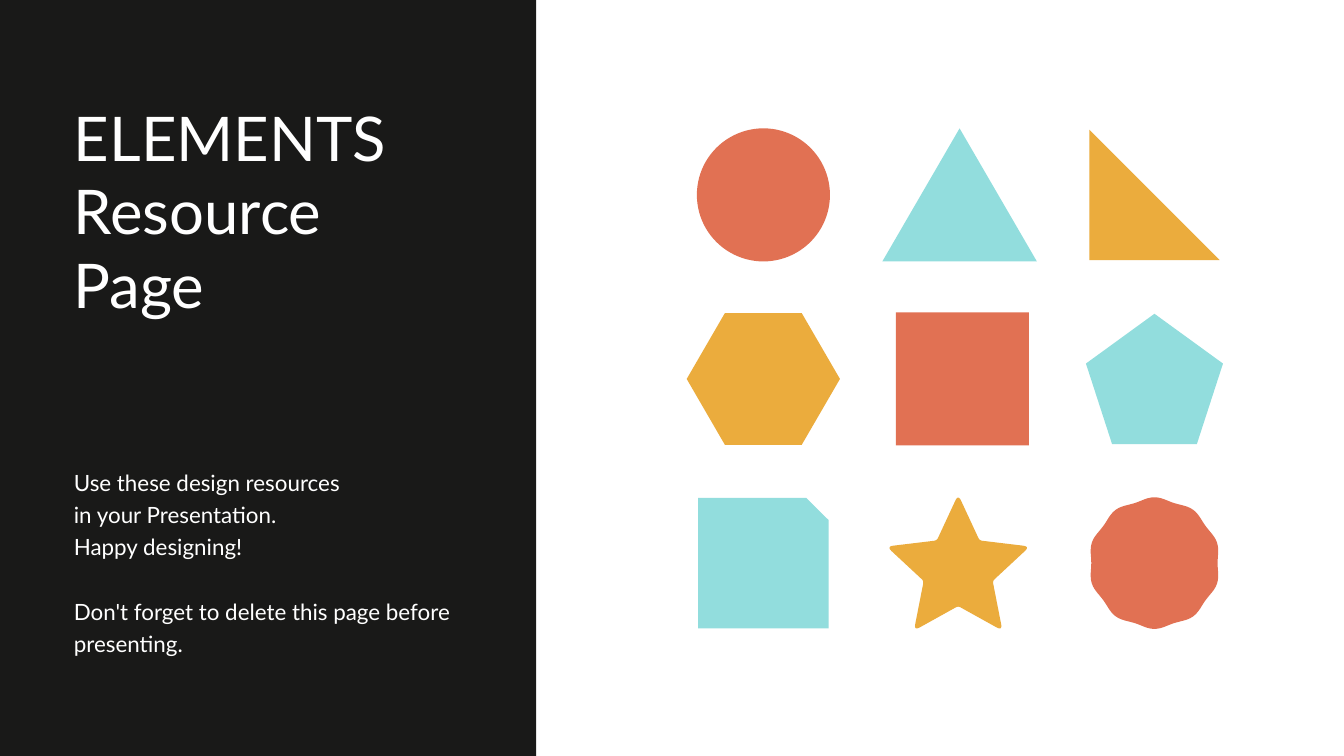
import math
import pptx
import pptx.util
import pptx.dml.color
import pptx.enum.shapes

Inches = pptx.util.Inches
RGBColor = pptx.dml.color.RGBColor
MSO = pptx.enum.shapes.MSO_SHAPE

BLACK = RGBColor(0x19, 0x19, 0x18)
WHITE = RGBColor(0xFF, 0xFF, 0xFF)
CORAL = RGBColor(0xE1, 0x71, 0x53)
AQUA = RGBColor(0x92, 0xDD, 0xDD)
AMBER = RGBColor(0xEB, 0xAC, 0x3D)

# Content
TITLE = ["ELEMENTS", "Resource", "Page"]
BODY = ["Use these design resources", "in your Presentation.", "Happy designing!",
        "Don't forget to delete this page before presenting."]

# Preset elements: shape, colour, centre x, row, width, height, adjustments
LEFT, MIDDLE, RIGHT = 5.68, 7.14, 8.59
ROWS = [1.45, 2.82, 4.19]
ELEMENTS = [
    (MSO.OVAL, CORAL, LEFT, 0, 0.99, 0.99, []),
    (MSO.ISOSCELES_TRIANGLE, AQUA, MIDDLE, 0, 1.15, 0.99, []),
    (MSO.RIGHT_TRIANGLE, AMBER, RIGHT, 0, 0.97, 0.97, []),
    (MSO.RECTANGLE, CORAL, 7.16, 1, 0.99, 0.99, []),
    (MSO.HEXAGON, AMBER, LEFT, 1, 1.14, 0.98, [0.29]),
    (MSO.REGULAR_PENTAGON, AQUA, RIGHT, 1, 1.02, 0.97, []),
    (MSO.SNIP_1_RECTANGLE, AQUA, LEFT, 2, 0.97, 0.97, [0.17]),
]

SLIDE_W = 10
SLIDE_H = SLIDE_W * 9 / 16

prs = pptx.Presentation()
prs.slide_width, prs.slide_height = Inches(SLIDE_W), Inches(SLIDE_H)
s = prs.slides.add_slide(prs.slide_layouts[6])


def paint(sp, color):
    sp.fill.solid()
    sp.fill.fore_color.rgb = color
    sp.line.fill.background()
    sp.shadow.inherit = False


def add_preset(kind, color, x, y, w, h, adjustments=()):
    sp = s.shapes.add_shape(kind, Inches(x), Inches(y), Inches(w), Inches(h))
    for i, value in enumerate(adjustments):
        sp.adjustments[i] = value
    paint(sp, color)


def add_outline(points, color):
    pts = [(Inches(x), Inches(y)) for x, y in points]
    builder = s.shapes.build_freeform(*pts[0])
    builder.add_line_segments(pts[1:], close=True)
    paint(builder.convert_to_shape(), color)


def add_text(lines, y, h, size, spacing=None):
    tf = s.shapes.add_textbox(Inches(0.55), Inches(y), Inches(2.9), Inches(h)).text_frame
    tf.word_wrap = True
    tf.margin_left = tf.margin_right = tf.margin_top = tf.margin_bottom = 0
    for i, line in enumerate(lines):
        p = tf.paragraphs[0] if i == 0 else tf.add_paragraph()
        p.line_spacing = spacing
        r = p.add_run()
        r.text = line
        r.font.name = "Lato"
        r.font.size = pptx.util.Pt(size)
        r.font.color.rgb = WHITE
    return tf


def polar(cx, cy, radius, angle):
    """Point at a clockwise angle from the top."""
    return cx + radius * math.sin(angle), cy - radius * math.cos(angle)


def rounded(corners, cuts, steps=6):
    """Replace each corner by a quadratic curve starting its cut away."""
    points = []
    for i, (b, cut) in enumerate(zip(corners, cuts)):
        a, c = corners[i - 1], corners[(i + 1) % len(corners)]
        start, end = [tuple(q + (o - q) * cut / math.dist(b, other)
                            for q, o in zip(b, other)) for other in (a, c)]
        for k in range(steps + 1):
            t = k / steps
            points.append(tuple((1 - t) ** 2 * u + 2 * t * (1 - t) * v + t * t * w
                                for u, v, w in zip(start, b, end)))
    return points


# Dark panel with title and instructions
add_preset(MSO.RECTANGLE, BLACK, 0, 0, 3.99, SLIDE_H)
add_text(TITLE, 0.74, 1.67, 33)
body = add_text(BODY, 3.45, 1.41, 12, 1.2)
body.paragraphs[-1].space_before = pptx.util.Pt(17.3)

# Grid of preset elements
for kind, color, x, row, w, h, adjustments in ELEMENTS:
    add_preset(kind, color, x - w / 2, ROWS[row] - h / 2, w, h, adjustments)

# Badge with ten waves
turns = [math.radians(a) for a in range(0, 360, 3)]
add_outline([polar(RIGHT, ROWS[2], 0.48 + 0.01 * math.cos(10 * t), t) for t in turns],
            CORAL)

# Star with rounded corners, tips softer than the inner corners
star = [polar(7.13, 4.24, 0.27 if i % 2 else 0.56, i * math.pi / 5) for i in range(10)]
add_outline(rounded(star, [0.05, 0.02] * 5), AMBER)

prs.save("out.pptx")
